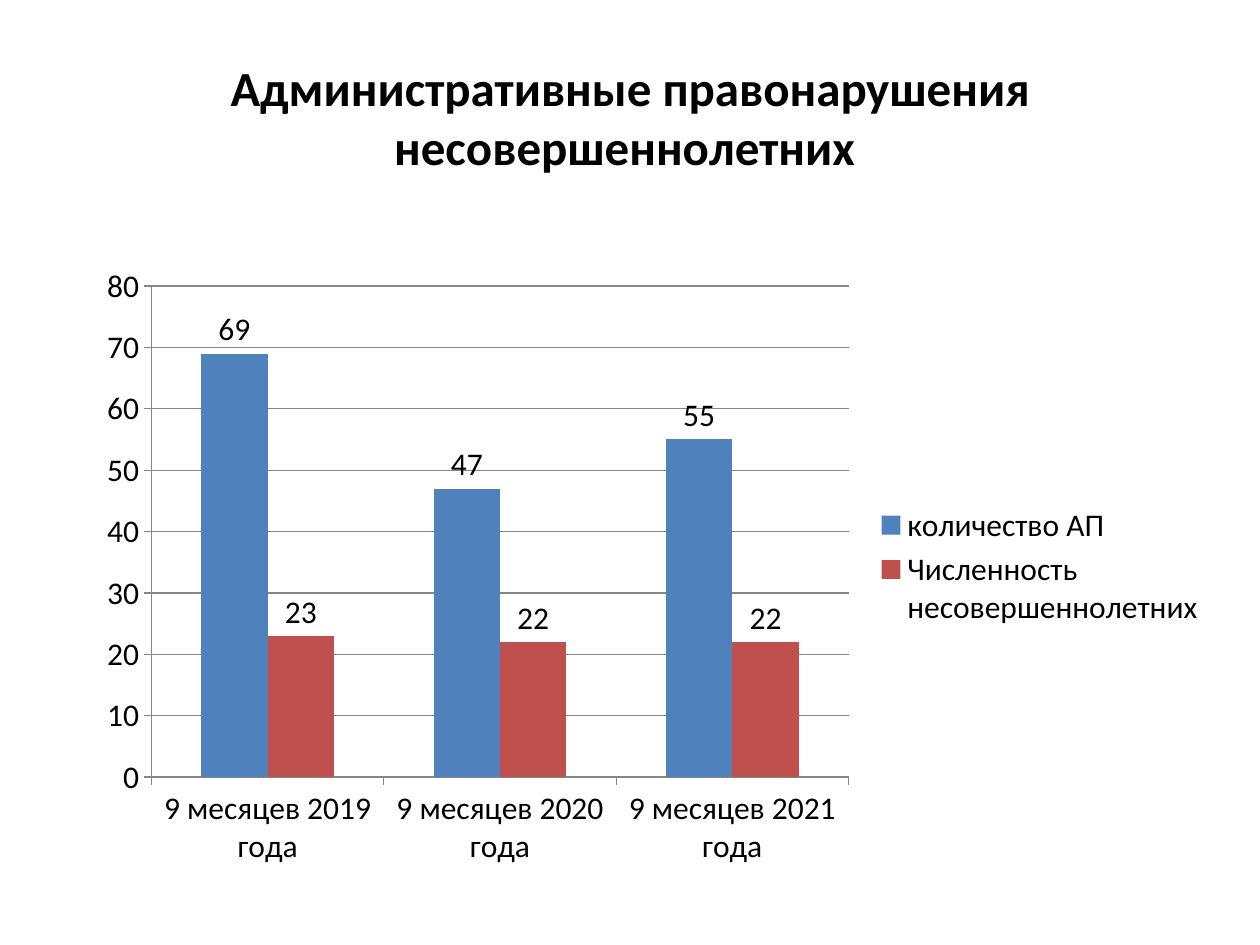
from dataclasses import dataclass

from pptx import Presentation
from pptx.chart.data import CategoryChartData
from pptx.dml.color import RGBColor
from pptx.enum.chart import XL_CHART_TYPE, XL_LABEL_POSITION, XL_LEGEND_POSITION, XL_TICK_MARK
from pptx.enum.text import MSO_ANCHOR, PP_ALIGN
from pptx.util import Emu, Pt

CLUSTERED = XL_CHART_TYPE.COLUMN_CLUSTERED
OUTSIDE_END = XL_LABEL_POSITION.OUTSIDE_END
LEGEND_RIGHT = XL_LEGEND_POSITION.RIGHT
TICK_OUTSIDE = XL_TICK_MARK.OUTSIDE
MIDDLE = MSO_ANCHOR.MIDDLE
CENTER = PP_ALIGN.CENTER

EMU_PER_PX = 914400 // 100
TITLE_ONLY = 5


@dataclass(frozen=True)
class Theme:
    font: str = "Calibri"
    text: str = "000000"
    line: str = "868686"
    series: tuple = ("4F81BD", "C0504D")
    title_size: int = 28
    chart_size: int = 18
    line_width: float = 0.75


def px(*lengths):
    return [Emu(length * EMU_PER_PX) for length in lengths]


class SlideBuilder:
    def __init__(self, slide, theme):
        self.slide = slide
        self.theme = theme

    def style_font(self, font, size, bold=False):
        font.name = self.theme.font
        font.size = Pt(size)
        font.bold = bold
        font.color.rgb = RGBColor.from_string(self.theme.text)

    def style_line(self, line):
        line.color.rgb = RGBColor.from_string(self.theme.line)
        line.width = Pt(self.theme.line_width)

    def title(self, text, box):
        shape = self.slide.shapes.title
        shape.left, shape.top, shape.width, shape.height = px(*box)
        frame = shape.text_frame
        frame.word_wrap = True
        frame.vertical_anchor = MIDDLE
        paragraph = frame.paragraphs[0]
        paragraph.alignment = CENTER
        run = paragraph.add_run()
        run.text = text
        self.style_font(run.font, self.theme.title_size, bold=True)

    def column_chart(self, categories, series, box):
        data = CategoryChartData()
        data.categories = categories
        for name, values in series.items():
            data.add_series(name, values)
        chart = self.slide.shapes.add_chart(CLUSTERED, *px(*box), data).chart
        self.style_font(chart.font, self.theme.chart_size)
        chart.has_title = False
        chart.has_legend = True
        chart.legend.position = LEGEND_RIGHT
        chart.legend.include_in_layout = False

        for axis in (chart.category_axis, chart.value_axis):
            axis.major_tick_mark = TICK_OUTSIDE
            self.style_line(axis.format.line)
        value_axis = chart.value_axis
        value_axis.minimum_scale, value_axis.maximum_scale = 0, 80
        value_axis.major_unit = 10
        value_axis.has_major_gridlines = True
        self.style_line(value_axis.major_gridlines.format.line)

        plot = chart.plots[0]
        plot.vary_by_categories = False
        plot.gap_width = 150
        plot.overlap = 0
        for column, color in zip(plot.series, self.theme.series):
            column.format.fill.solid()
            column.format.fill.fore_color.rgb = RGBColor.from_string(color)
            labels = column.data_labels
            labels.show_value = True
            labels.position = OUTSIDE_END
            self.style_font(labels.font, self.theme.chart_size)


def main():
    presentation = Presentation()
    presentation.slide_width, presentation.slide_height = px(1000, 750)
    slide = presentation.slides.add_slide(presentation.slide_layouts[TITLE_ONLY])
    builder = SlideBuilder(slide, Theme())
    builder.title("Административные правонарушения несовершеннолетних ", (50, 30, 900, 125))
    builder.column_chart(
        [f"9 месяцев {year} года" for year in (2019, 2020, 2021)],
        {
            "количество АП": (69, 47, 55),
            "Численность несовершеннолетних": (23, 22, 22),
        },
        (67, 202, 900, 495),
    )
    presentation.save("out.pptx")


if __name__ == "__main__":
    main()
